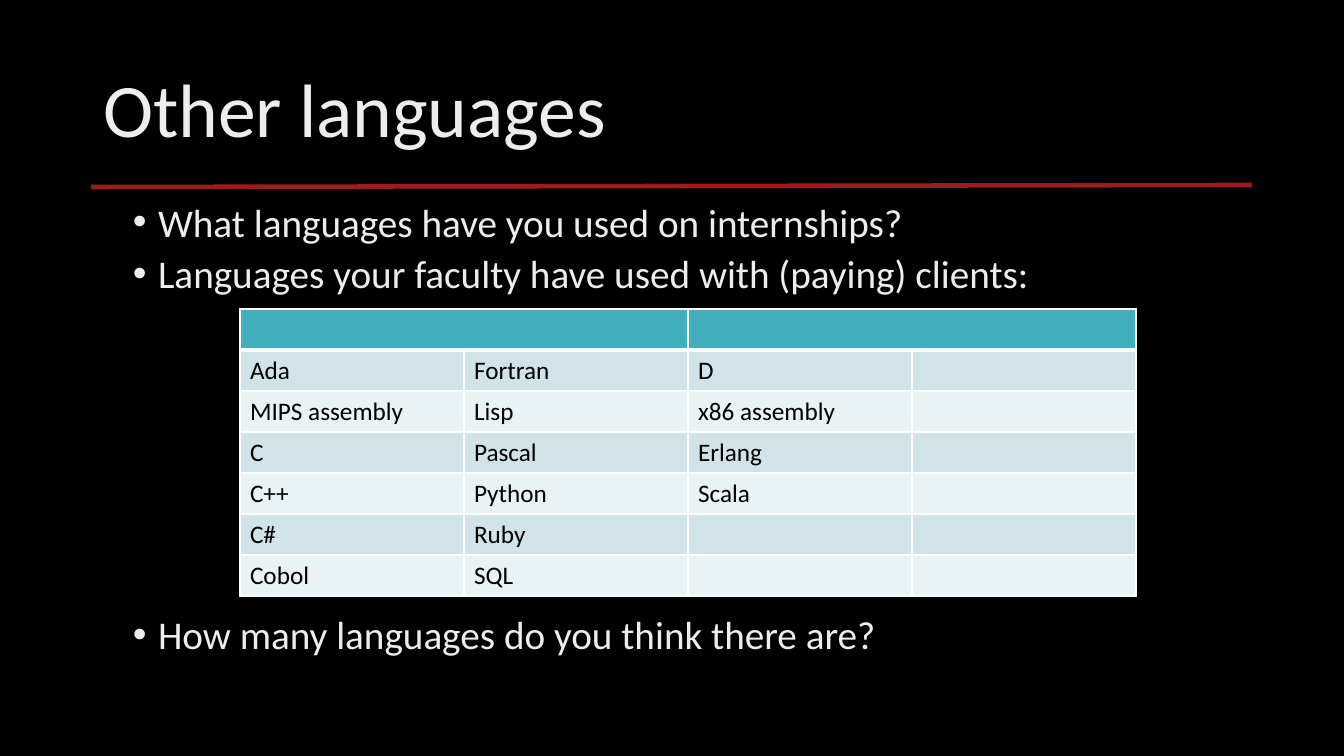
from lxml import etree
from pptx import Presentation
from pptx.dml.color import RGBColor
from pptx.enum.shapes import MSO_CONNECTOR
from pptx.enum.text import MSO_ANCHOR, PP_ALIGN
from pptx.oxml.ns import qn
from pptx.util import Emu, Pt

BLACK = RGBColor(0x00, 0x00, 0x00)
WHITE = RGBColor(0xFF, 0xFF, 0xFF)
LIGHT = RGBColor(0xED, 0xED, 0xED)
RED = RGBColor(0x9E, 0x1B, 0x20)
TEAL = RGBColor(0x41, 0xAE, 0xBD)
BANDS = [RGBColor(0xCF, 0xE3, 0xE8), RGBColor(0xE9, 0xF2, 0xF4)]
FONT = "Calibri"


def px(*lengths):
    return [Emu(round(n * 914400 / 100.8)) for n in lengths]


def style(p, size, color):
    for r in p.runs:
        r.font.name = FONT
        r.font.size = Pt(size)
        r.font.color.rgb = color


prs = Presentation()
prs.slide_width, prs.slide_height = px(1344, 756)
s = prs.slides.add_slide(prs.slide_layouts[5])
s.background.fill.solid()
s.background.fill.fore_color.rgb = BLACK

rule = s.shapes.add_connector(MSO_CONNECTOR.STRAIGHT, *px(91, 187, 1252, 185))
rule.line.color.rgb = RED
rule.line.width = Pt(3.25)
etree.SubElement(rule._element.spPr, qn("a:effectLst"))

title = s.shapes.title
title.left, title.top, title.width, title.height = px(93, 40, 1159, 146)
tf = title.text_frame
tf.text = "Other languages"
tf.word_wrap = True
tf.vertical_anchor = MSO_ANCHOR.MIDDLE
p = tf.paragraphs[0]
p.alignment = PP_ALIGN.LEFT
p.line_spacing = 0.9
style(p, 54, LIGHT)

bullets = [
    ("What languages have you used on internships?", 0),
    ("Languages your faculty have used with (paying) clients:", 10),
    ("How many languages do you think there are?", 231),
]
body = s.shapes.add_textbox(*px(123, 202, 1128, 480))
tf = body.text_frame
tf.word_wrap = True
for i, (text, gap) in enumerate(bullets):
    p = tf.paragraphs[0] if i == 0 else tf.add_paragraph()
    p.text = text
    p.line_spacing = 0.8
    p.space_before = Pt(gap)
    pPr = p._p.get_or_add_pPr()
    pPr.set("marL", "228600")
    pPr.set("indent", "-228600")
    etree.SubElement(pPr, qn("a:buFont"), typeface="Arial")
    etree.SubElement(pPr, qn("a:buChar"), char="•")
    style(p, 28, LIGHT)

rows = [
    ["", "", "", ""],
    ["Ada", "Fortran", "D", ""],
    ["MIPS assembly", "Lisp", "x86 assembly", ""],
    ["C", "Pascal", "Erlang", ""],
    ["C++", "Python", "Scala", ""],
    ["C#", "Ruby", "", ""],
    ["Cobol", "SQL", "", ""],
]
table = s.shapes.add_table(len(rows), 4, *px(240, 309, 4 * 224, len(rows) * 41)).table
for column in table.columns:
    column.width = px(224)[0]
for y, row in enumerate(rows):
    table.rows[y].height = px(41)[0]
    for x, text in enumerate(row):
        cell = table.cell(y, x)
        cell.text = text
        style(cell.text_frame.paragraphs[0], 18, BLACK)
        tcPr = cell._tc.get_or_add_tcPr()
        for side in ("L", "R", "T", "B"):
            thick = (y, side) in ((0, "B"), (1, "T"))
            ln = etree.SubElement(tcPr, qn("a:ln" + side), w=str(Pt(3 if thick else 1)))
            fill = etree.SubElement(ln, qn("a:solidFill"))
            etree.SubElement(fill, qn("a:srgbClr"), val=str(WHITE))
        cell.fill.solid()
        cell.fill.fore_color.rgb = BANDS[(y - 1) % 2] if y else TEAL
for x in (0, 2):
    table.cell(0, x).merge(table.cell(0, x + 1))

prs.save("out.pptx")
